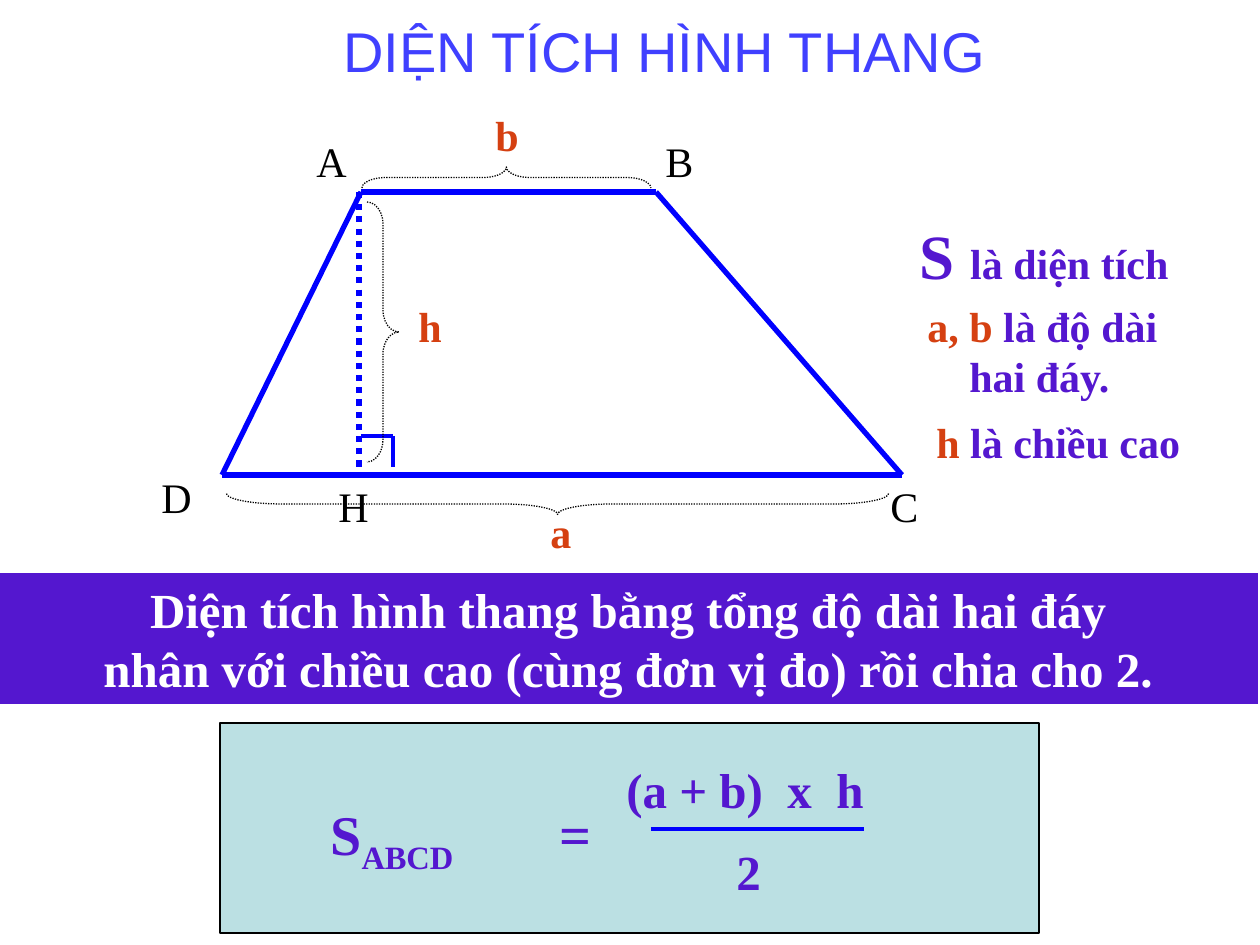
from dataclasses import dataclass
from typing import Optional

import pptx
import pptx.dml.color
import pptx.enum.dml
import pptx.enum.shapes
import pptx.enum.text
import pptx.oxml
import pptx.oxml.ns
import pptx.util

PX = 914400 / 126
SERIF = "Times New Roman"
BLUE, PURPLE, ORANGE, BLACK, WHITE = "0000FF", "5417CF", "D54011", "000000", "FFFFFF"
PALE = "BBE0E3"
DOTTED = pptx.enum.dml.MSO_LINE.ROUND_DOT
CENTER = pptx.enum.text.PP_ALIGN.CENTER
SHAPE = pptx.enum.shapes.MSO_SHAPE


@dataclass
class Run:
    text: str
    size: int = 24
    color: str = PURPLE
    bold: bool = True
    font: str = SERIF
    baseline: int = 0
    alpha: int = 100


@dataclass
class Label:
    x: int
    y: int
    w: int
    h: int
    runs: list[Run]
    centered: bool = False
    wrap: bool = True
    hang: int = 0


@dataclass
class Segment:
    start: tuple[int, int]
    end: tuple[int, int]
    width: float = 3
    dash: Optional[pptx.enum.dml.MSO_LINE] = None


@dataclass
class Brace:
    x: int
    y: int
    w: int
    h: int
    curl: float
    rotation: int = 0


def emu(px: int) -> int:
    return round(px * PX)


def rgb(color: str) -> pptx.dml.color.RGBColor:
    return pptx.dml.color.RGBColor.from_string(color)


def write_runs(tf, runs: list[Run], centered: bool = False, hang: int = 0) -> None:
    """Fill the first paragraph; a newline in a run becomes a line break."""
    p = tf.paragraphs[0]
    if centered:
        p.alignment = CENTER
    if hang:
        props = p._p.get_or_add_pPr()
        props.set("marL", str(emu(hang)))
        props.set("indent", str(-emu(hang)))
    for run in runs:
        for i, line in enumerate(run.text.split("\n")):
            if i:
                p.add_line_break()
            r = p.add_run()
            r.text = line
            r.font.name = run.font
            r.font.size = pptx.util.Pt(run.size)
            r.font.bold = run.bold
            r.font.color.rgb = rgb(run.color)
            if run.baseline:
                r._r.get_or_add_rPr().set("baseline", str(run.baseline * 1000))
            if run.alpha < 100:
                clr = r._r.rPr.find(".//" + pptx.oxml.ns.qn("a:srgbClr"))
                alpha = pptx.oxml.parse_xml(f'<a:alpha {pptx.oxml.ns.nsdecls("a")} val="{run.alpha * 1000}"/>')
                clr.append(alpha)


def add_label(s, label: Label) -> None:
    sp = s.shapes.add_textbox(*map(emu, (label.x, label.y, label.w, label.h)))
    sp.text_frame.word_wrap = label.wrap
    write_runs(sp.text_frame, label.runs, label.centered, label.hang)


def add_rectangle(s, x: int, y: int, w: int, h: int, fill: str, line: Optional[str] = None):
    sp = s.shapes.add_shape(SHAPE.RECTANGLE, *map(emu, (x, y, w, h)))
    sp.shadow.inherit = False
    sp.fill.solid()
    sp.fill.fore_color.rgb = rgb(fill)
    if line:
        sp.line.color.rgb = rgb(line)
        sp.line.width = pptx.util.Pt(0.75)
    else:
        sp.line.fill.background()
    return sp


def add_segment(s, seg: Segment) -> None:
    sp = s.shapes.add_connector(
        pptx.enum.shapes.MSO_CONNECTOR.STRAIGHT, *map(emu, seg.start + seg.end))
    sp.line.color.rgb = rgb(BLUE)
    sp.line.width = pptx.util.Pt(seg.width)
    if seg.dash:
        sp.line.dash_style = seg.dash
    sp._element.spPr.append(pptx.oxml.parse_xml(f'<a:effectLst {pptx.oxml.ns.nsdecls("a")}/>'))


def add_brace(s, brace: Brace) -> None:
    sp = s.shapes.add_shape(SHAPE.RIGHT_BRACE, *map(emu, (brace.x, brace.y, brace.w, brace.h)))
    sp.shadow.inherit = False
    sp.rotation = brace.rotation
    sp.adjustments[0] = brace.curl
    sp.adjustments[1] = 0.5
    sp.fill.background()
    sp.line.color.rgb = rgb(BLACK)
    sp.line.width = pptx.util.Pt(0.75)
    sp.line.dash_style = DOTTED


A, B, C, D = (361, 192), (656, 192), (902, 475), (222, 475)
VERTEX_LABELS = {"A": (304, 129), "B": (653, 129), "C": (878, 474), "D": (149, 465), "H": (326, 474)}
LENGTH_LABELS = {"b": (483, 103), "h": (406, 294), "a": (538, 500)}

SEGMENTS = [
    Segment(A, B), Segment(A, D), Segment(B, C), Segment(D, C),
    Segment((359, 192), (359, 475), 3.5, DOTTED),
    Segment((361, 436), (393, 436), 2.25),
    Segment((393, 436), (393, 467), 2.25),
]
BRACES = [
    Brace(496, 33, 21, 289, 1.15, 270),
    Brace(547, 173, 21, 662, 2.63, 90),
    Brace(367, 202, 32, 260, 0.69),
]
TITLE = Label(276, 10, 777, 84,
              [Run("DIỆN TÍCH HÌNH THANG", 32, BLUE, False, "Arial", alpha=75)],
              centered=True, wrap=False)
LEGEND = [
    Label(907, 210, 335, 89, [Run("S ", 36), Run("là diện tích")]),
    Label(915, 294, 384, 115, [Run("a, b ", color=ORANGE), Run("là độ dài\nhai đáy.")], hang=42),
    Label(924, 410, 336, 64, [Run("h", color=ORANGE), Run(" là chiều cao")]),
]
FORMULA = [
    Label(318, 793, 262, 81, [Run("S", 32), Run("ABCD", 32, baseline=-25)]),
    Label(547, 793, 73, 81, [Run("=", 32)]),
    Label(614, 753, 457, 72, [Run("(a + b)  x  h", 28)]),
    Label(620, 835, 257, 72, [Run("2", 28)], centered=True),
]
RULE = ("Diện tích hình thang bằng tổng độ dài hai đáy\n"
        "nhân với chiều cao (cùng đơn vị đo) rồi chia cho 2.")


def main() -> None:
    prs = pptx.Presentation()
    prs.slide_width, prs.slide_height = emu(1260), emu(945)
    s = prs.slides.add_slide(prs.slide_layouts[6])

    add_label(s, TITLE)
    banner = add_rectangle(s, -2, 573, 1260, 131, PURPLE)
    banner.text_frame.word_wrap = True
    write_runs(banner.text_frame, [Run(RULE, 28, WHITE)], centered=True)

    add_rectangle(s, 220, 723, 819, 210, PALE, BLACK)
    for label in FORMULA:
        add_label(s, label)
    add_segment(s, Segment((651, 829), (864, 829), 2.25))

    for name, (x, y) in VERTEX_LABELS.items():
        add_label(s, Label(x, y, 84, 64, [Run(name, color=BLACK, bold=False)]))
    for seg in SEGMENTS:
        add_segment(s, seg)
    for brace in BRACES:
        add_brace(s, brace)
    for name, (x, y) in LENGTH_LABELS.items():
        add_label(s, Label(x, y, 84, 64, [Run(name, color=ORANGE)]))
    for label in LEGEND:
        add_label(s, label)

    prs.save("out.pptx")


if __name__ == "__main__":
    main()
